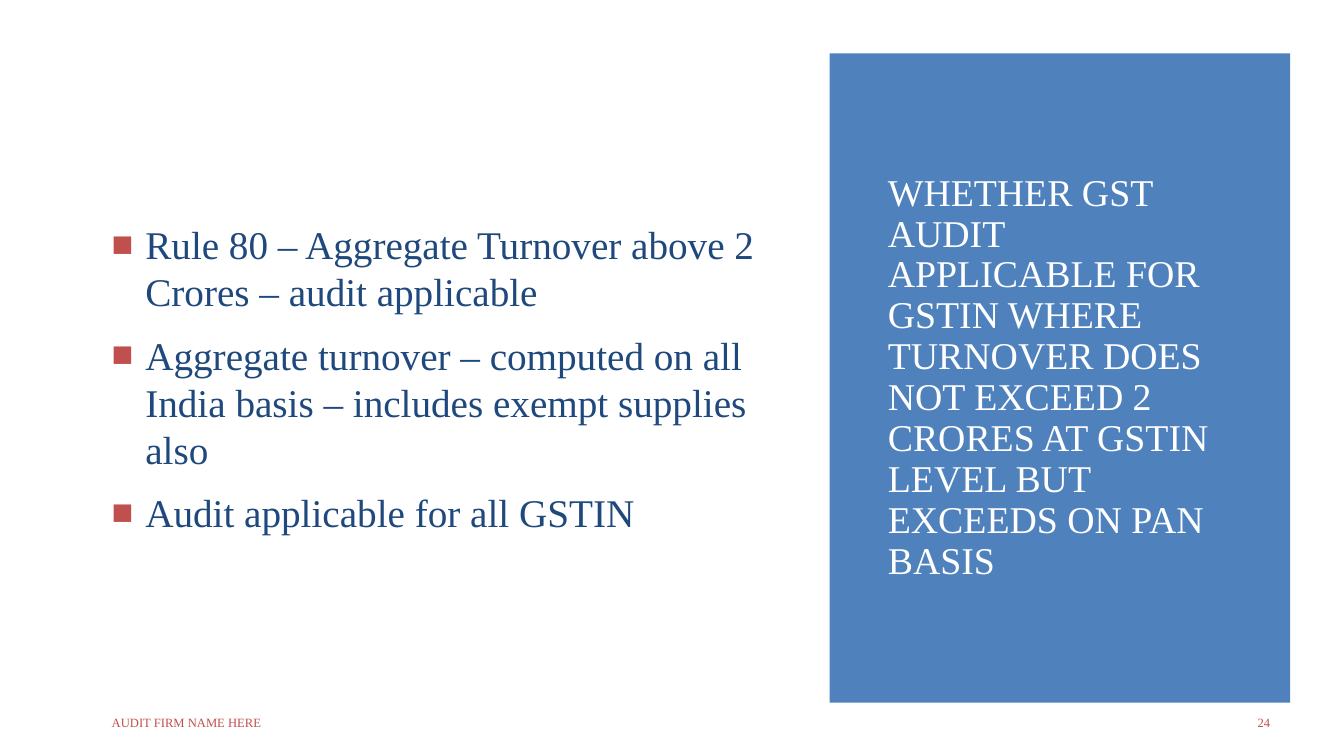
from lxml import etree
from pptx import Presentation
from pptx.dml.color import RGBColor
from pptx.enum import shapes, text
from pptx.oxml import ns
from pptx.util import Pt

WHITE = RGBColor(0xFF, 0xFF, 0xFF)
BLUE = RGBColor(0x4F, 0x81, 0xBD)
NAVY = RGBColor(0x1F, 0x49, 0x7D)
RED = RGBColor(0xC0, 0x50, 0x4D)
FONT = "Times New Roman"
WIDTH, HEIGHT = 960, 540

TITLE = ("WHETHER GST AUDIT APPLICABLE FOR GSTIN WHERE TURNOVER DOES NOT "
         "EXCEED 2 CRORES AT GSTIN LEVEL BUT EXCEEDS ON PAN BASIS")
POINTS = [
    "Rule 80 – Aggregate Turnover above 2 Crores – audit applicable",
    "Aggregate turnover – computed on all India basis – includes exempt supplies also",
    "Audit applicable for all GSTIN",
]


def add_panel(page, left, top, width, height, color):
    panel = page.shapes.add_shape(shapes.MSO_SHAPE.RECTANGLE,
                                  Pt(left), Pt(top), Pt(width), Pt(height))
    panel.shadow.inherit = False
    panel.fill.solid()
    panel.fill.fore_color.rgb = color
    panel.line.fill.background()


def add_text(page, left, top, width, height, lines, size, color):
    """Add a vertically centred text box and return its paragraphs."""
    box = page.shapes.add_textbox(Pt(left), Pt(top), Pt(width), Pt(height))
    frame = box.text_frame
    frame.word_wrap = True
    frame.vertical_anchor = text.MSO_ANCHOR.MIDDLE
    frame.text = "\n".join(lines)
    for para in frame.paragraphs:
        para.font.name = FONT
        para.font.size = Pt(size)
        para.font.color.rgb = color
    return frame.paragraphs


def add_bullet(para, color, indent):
    """Give a paragraph a hanging square bullet."""
    props = para._p.get_or_add_pPr()
    props.set("marL", str(Pt(indent)))
    props.set("indent", str(-Pt(indent)))
    bullet_color = etree.Element(ns.qn("a:buClr"))
    etree.SubElement(bullet_color, ns.qn("a:srgbClr"), val=str(color))
    bullet = [
        bullet_color,
        etree.Element(ns.qn("a:buSzPct"), val="92000"),
        etree.Element(ns.qn("a:buFont"), typeface=FONT),
        etree.Element(ns.qn("a:buChar"), char="■"),
    ]
    # Bullet settings come before the default run properties
    defaults = props.find(ns.qn("a:defRPr"))
    for item in bullet:
        defaults.addprevious(item)


def main():
    deck = Presentation()
    deck.slide_width, deck.slide_height = Pt(WIDTH), Pt(HEIGHT)
    page = deck.slides.add_slide(deck.slide_layouts[6])

    # Background and title panel
    add_panel(page, 0, 0, WIDTH, HEIGHT, WHITE)
    add_panel(page, 592.6, 38.2, 329, 463.7, BLUE)

    # Title
    title, = add_text(page, 627.1, 87.8, 257.8, 364.3, [TITLE], 27, WHITE)
    title.line_spacing = 0.9

    # Bulleted answer
    for para in add_text(page, 72.7, 87.8, 481, 364.3, POINTS, 28, NAVY):
        para.space_before = Pt(5.6)
        para.space_after = Pt(6)
        add_bullet(para, RED, 24)

    # Footer and page number
    add_text(page, 72.7, 501.5, 481, 28.8, ["AUDIT FIRM NAME HERE"], 9, RED)
    number, = add_text(page, 831.6, 501.8, 82.8, 28.8, ["24"], 9, RED)
    number.alignment = text.PP_ALIGN.RIGHT

    deck.save("out.pptx")


if __name__ == "__main__":
    main()
